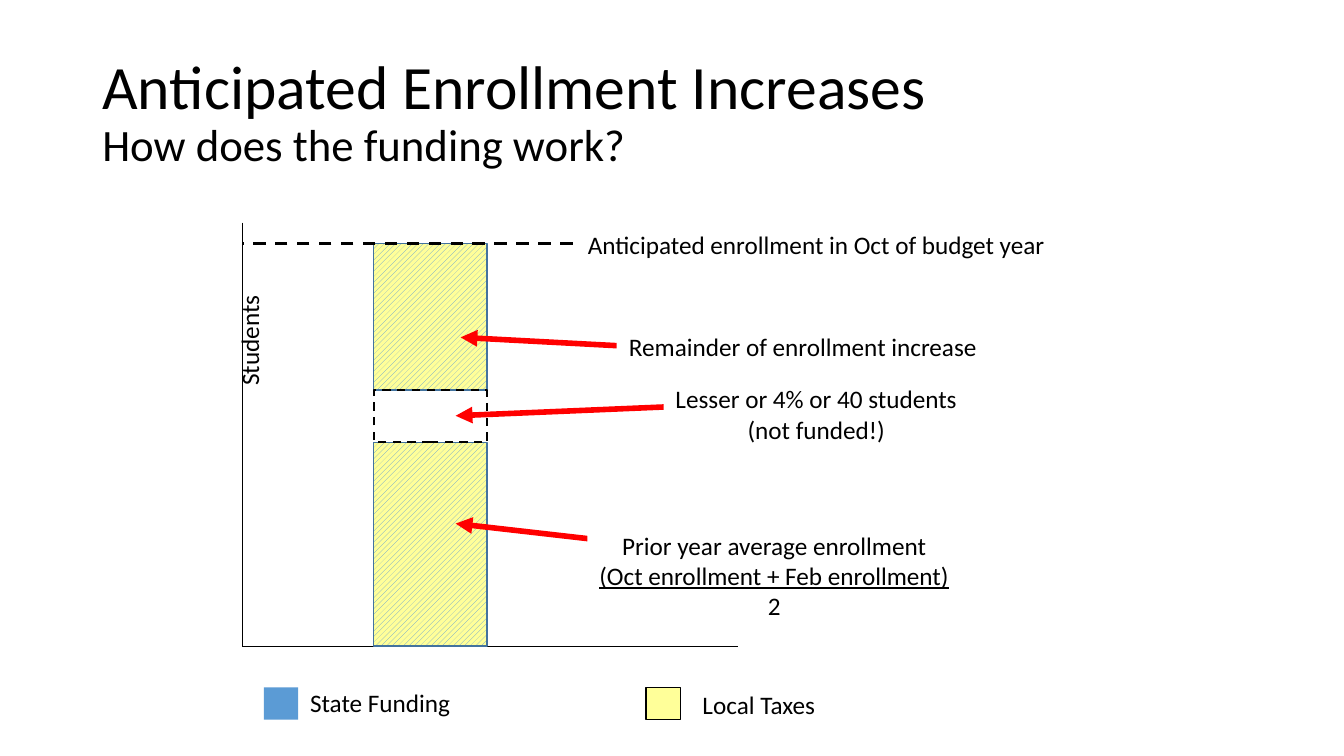
from lxml.etree import SubElement
from pptx import Presentation
from pptx.dml.color import RGBColor
from pptx.enum.dml import MSO_LINE_DASH_STYLE as Dash, MSO_PATTERN_TYPE as Pattern
from pptx.enum.shapes import MSO_CONNECTOR_TYPE as Connector, MSO_SHAPE as Shape
from pptx.enum.text import MSO_ANCHOR as Anchor, PP_ALIGN as Align
from pptx.oxml.ns import qn
from pptx.util import Pt

BLACK = RGBColor(0x00, 0x00, 0x00)
WHITE = RGBColor(0xFF, 0xFF, 0xFF)
STATE_BLUE = RGBColor(0x5B, 0x9B, 0xD5)
LOCAL_YELLOW = RGBColor(0xFF, 0xFF, 0x99)
BAR_BORDER = RGBColor(0x43, 0x73, 0x9E)
ARROW_RED = RGBColor(0xFF, 0x00, 0x00)
FONT = "Calibri"


def set_font(font, size):
    font.name = FONT
    font.size = Pt(size)
    font.color.rgb = BLACK


def add_line(slide, start, end, color, width, dash=None, arrow=False):
    line = slide.shapes.add_connector(Connector.STRAIGHT, *map(Pt, start + end))
    line.line.color.rgb = color
    line.line.width = Pt(width)
    if dash:
        line.line.dash_style = dash
    if arrow:
        SubElement(line.line._get_or_add_ln(), qn("a:tailEnd"), type="triangle")
    SubElement(line._element.spPr, qn("a:effectLst"))


def add_rectangle(slide, box, border=None, width=1):
    """Add a rectangle whose fill is left to the caller."""
    shape = slide.shapes.add_shape(Shape.RECTANGLE, *map(Pt, box))
    shape.shadow.inherit = False
    if border is None:
        shape.line.fill.background()
    else:
        shape.line.color.rgb = border
        shape.line.width = Pt(width)
    return shape


def add_label(slide, box, lines, underlined=None):
    """Add centred text on white, which hides the lines running behind it."""
    shape = add_rectangle(slide, box)
    shape.fill.solid()
    shape.fill.fore_color.rgb = WHITE
    frame = shape.text_frame
    frame.word_wrap = False
    frame.vertical_anchor = Anchor.TOP
    frame.text = "\n".join(lines)
    for index, paragraph in enumerate(frame.paragraphs):
        paragraph.alignment = Align.CENTER
        set_font(paragraph.font, 18)
        if index == underlined:
            paragraph.runs[0].font.underline = True


def add_title(slide, box):
    frame = slide.shapes.add_textbox(*map(Pt, box)).text_frame
    frame.word_wrap = True
    frame.vertical_anchor = Anchor.MIDDLE
    paragraph = frame.paragraphs[0]
    paragraph.line_spacing = 0.9
    heading = paragraph.add_run()
    heading.text = "Anticipated Enrollment Increases"
    set_font(heading.font, 44)
    paragraph.add_line_break()
    question = paragraph.add_run()
    question.text = "How does the funding work?"
    set_font(question.font, 32)


def add_axes(slide, box):
    left, top, width, height = box
    bottom = top + height
    add_line(slide, (left, top), (left, bottom), BLACK, 0.5)
    add_line(slide, (left + width, bottom), (left, bottom), BLACK, 0.5)

    name_width, name_height = 81, 29
    name = slide.shapes.add_textbox(
        Pt(left + 5 - name_width / 2), Pt(top + 83 - name_height / 2),
        Pt(name_width), Pt(name_height))
    name.rotation = 270
    name.text_frame.word_wrap = True
    name.text_frame.text = "Students"
    set_font(name.text_frame.paragraphs[0].font, 18)


def add_enrollment_bar(slide, box):
    """Stack prior enrollment, the unfunded gap and the remainder."""
    left, top, width, height = box
    remainder, gap = 104.5, 37.5
    prior = height - remainder - gap
    for part_top, part_height in ((top + height - prior, prior), (top, remainder)):
        part = add_rectangle(slide, (left, part_top, width, part_height), BAR_BORDER)
        part.fill.patterned()
        part.fill.pattern = Pattern.WIDE_UPWARD_DIAGONAL
        part.fill.fore_color.rgb = STATE_BLUE
        part.fill.back_color.rgb = LOCAL_YELLOW
    unfunded = add_rectangle(slide, (left, top + remainder, width, gap), BLACK, 1.5)
    unfunded.fill.background()
    unfunded.line.dash_style = Dash.DASH


def add_callouts(slide, box):
    """Explain the bar in the given box with arrows and a level line."""
    left, top, _, _ = box
    callouts = (
        ((300, 227.5), (58.5, 200), (152.5, 201, 267, 73),
         ("Prior year average enrollment", "(Oct enrollment + Feb enrollment)", "2"), 1),
        ((307, 80), (62, 67), (173.5, 59, 266, 29),
         ("Remainder of enrollment increase",), None),
        ((307, 112.5), (58.5, 123), (207, 96.5, 218, 51),
         ("Lesser or 4% or 40 students", "(not funded!)"), None),
    )
    for start, end, label, lines, underlined in callouts:
        add_line(slide, (left + start[0], top + start[1]),
                 (left + end[0], top + end[1]), ARROW_RED, 4, arrow=True)
        add_label(slide, (left + label[0], top + label[1], *label[2:]), lines, underlined)

    add_line(slide, (left + 173.5, top), (left - 94, top), BLACK, 2.25, Dash.DASH)
    add_label(slide, (left + 143.5, top - 14, 345, 29),
              ("Anticipated enrollment in Oct of budget year",))


def add_legend(slide, box):
    left, top, width, height = box
    entries = (
        (0, STATE_BLUE, None, "State Funding", 25, -3.5, 116),
        (width, LOCAL_YELLOW, BLACK, "Local Taxes", 32.5, -2, 96),
    )
    for offset, color, border, text, text_left, text_top, text_width in entries:
        key = add_rectangle(slide, (left + offset, top, 24.5, height), border)
        key.fill.solid()
        key.fill.fore_color.rgb = color
        add_label(slide, (left + offset + text_left, top + text_top, text_width, 29), (text,))


def main():
    presentation = Presentation()
    presentation.slide_width, presentation.slide_height = Pt(960), Pt(540)
    slide = presentation.slides.add_slide(presentation.slide_layouts[6])
    bar = (267, 174, 81, 287.5)
    add_title(slide, (66, 29, 828, 104.5))
    add_axes(slide, (173, 159, 354, 302.5))
    add_enrollment_bar(slide, bar)
    add_callouts(slide, bar)
    add_legend(slide, (188.5, 491, 273, 23))
    presentation.save("out.pptx")


if __name__ == "__main__":
    main()
